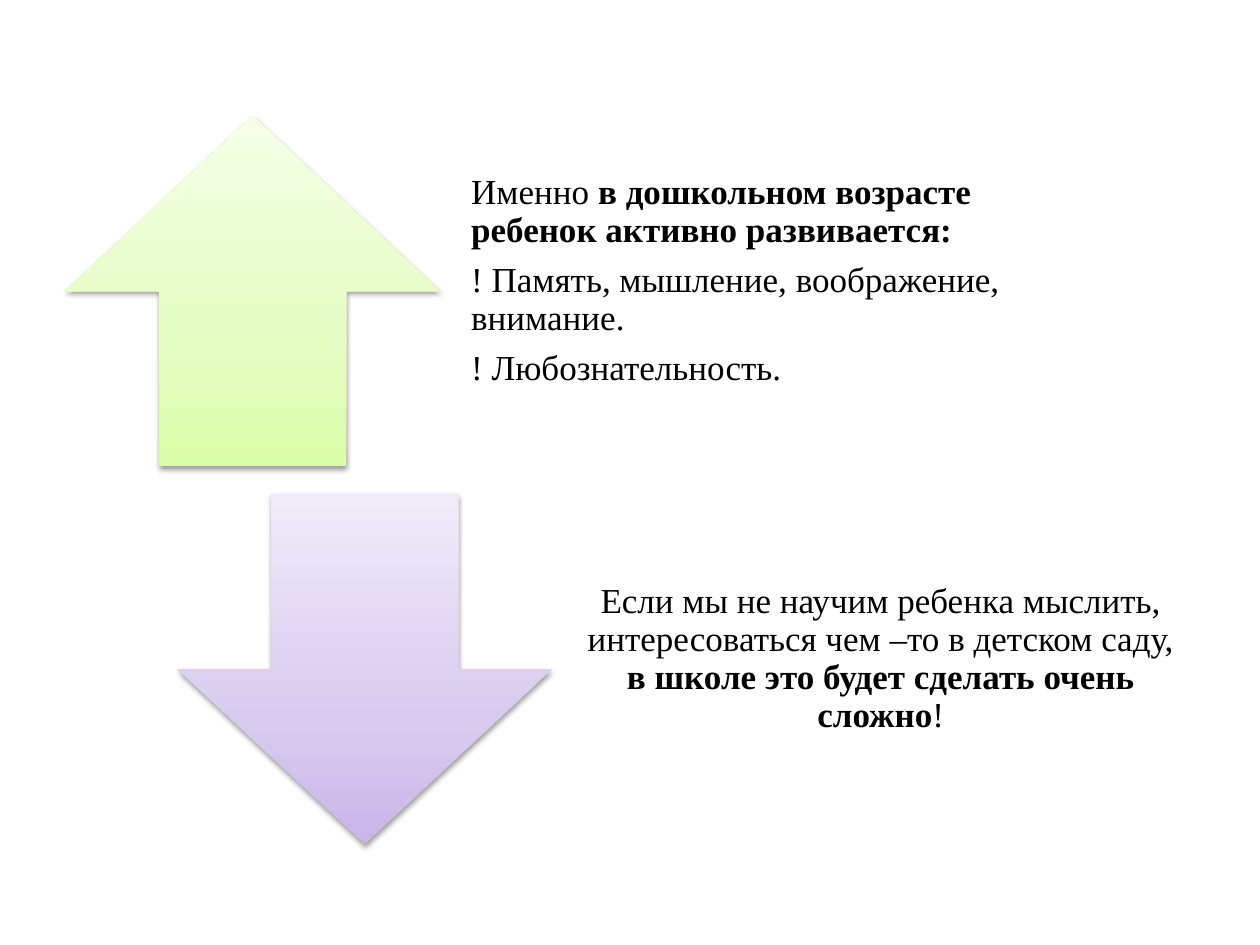
from copy import deepcopy
from dataclasses import dataclass

from lxml.etree import SubElement
from pptx import Presentation
from pptx.dml.color import RGBColor
from pptx.enum.shapes import MSO_SHAPE as Preset
from pptx.enum.text import MSO_ANCHOR as Anchor, PP_ALIGN as Align
from pptx.oxml.ns import qn
from pptx.util import Inches, Pt


@dataclass(frozen=True)
class Theme:
    """Colours, font and type sizes of the slide."""
    font: str = "Times New Roman"
    size: Pt = Pt(20)
    space_after: Pt = Pt(7)
    ink: str = "000000"
    green: tuple[str, ...] = ("DAFDA7", "E4FCC2", "F5FFE7")
    violet: tuple[str, ...] = ("C9B5E8", "D8CBEE", "F0EAF9")
    stops: tuple[float, ...] = (0, 0.35, 1)


@dataclass(frozen=True)
class Phrase:
    """A run of words in one weight."""
    words: str
    bold: bool = False


@dataclass(frozen=True)
class Statement:
    """An arrow with the text at its right."""
    preset: Preset
    left: float
    top: float
    colours: tuple[str, ...]
    align: Align
    paragraphs: tuple[tuple[Phrase, ...], ...]


THEME = Theme()
ARROW_WIDTH, TEXT_WIDTH, ROW_HEIGHT, GAP = 2.97, 5.04, 2.78, 0.09
STATEMENTS = (
    Statement(Preset.UP_ARROW, 0.52, 0.92, THEME.green, Align.LEFT, (
        (Phrase("Именно "),
         Phrase("в дошкольном возрасте ребенок активно развивается:", True)),
        (Phrase("! Память, мышление, воображение, внимание."),),
        (Phrase("! Любознательность."),),
    )),
    Statement(Preset.DOWN_ARROW, 1.41, 3.92, THEME.violet, Align.CENTER, (
        (Phrase("Если мы не научим ребенка мыслить, интересоваться чем –то в детском саду, "),
         Phrase("в школе это будет сделать очень сложно", True),
         Phrase("!")),
    )),
)


def apply_format(target: object, values: dict) -> None:
    """Set each named attribute on the target."""
    for name, value in values.items():
        setattr(target, name, value)


def add_soft_shadow(properties) -> None:
    """Put a faint downward shadow in the emptied effect list."""
    shadow = SubElement(properties.find(qn("a:effectLst")), qn("a:outerShdw"),
                        blurRad=str(Pt(3.1)), dist=str(Pt(1.6)),
                        dir="5400000", rotWithShape="0")
    colour = SubElement(shadow, qn("a:srgbClr"), val=THEME.ink)
    SubElement(colour, qn("a:alpha"), val="38000")


def draw_arrow(slide, statement: Statement) -> None:
    """Draw the arrow with its three-stop gradient and shadow."""
    arrow = slide.shapes.add_shape(
        statement.preset, Inches(statement.left), Inches(statement.top),
        Inches(ARROW_WIDTH), Inches(ROW_HEIGHT))
    arrow.line.fill.background()
    arrow.fill.gradient()
    arrow.fill.gradient_angle = 90
    properties = arrow._element.spPr
    stop_list = properties.find(qn("a:gradFill")).find(qn("a:gsLst"))
    stop_list.append(deepcopy(stop_list[0]))
    for stop, position, colour in zip(arrow.fill.gradient_stops, THEME.stops, statement.colours):
        stop.position = position
        stop.color.rgb = RGBColor.from_string(colour)
    arrow.shadow.inherit = False
    add_soft_shadow(properties)


def draw_text(slide, statement: Statement) -> None:
    """Write the paragraphs at the right of the arrow."""
    frame = slide.shapes.add_textbox(
        Inches(statement.left + ARROW_WIDTH + GAP), Inches(statement.top),
        Inches(TEXT_WIDTH), Inches(ROW_HEIGHT)).text_frame
    apply_format(frame, {
        "word_wrap": True, "vertical_anchor": Anchor.MIDDLE,
        "margin_left": Inches(0.16), "margin_top": 0,
        "margin_right": Inches(0.16), "margin_bottom": Inches(0.16)})
    for index, phrases in enumerate(statement.paragraphs):
        paragraph = frame.add_paragraph() if index else frame.paragraphs[0]
        apply_format(paragraph, {
            "alignment": statement.align, "line_spacing": 0.9,
            "space_after": THEME.space_after})
        for phrase in phrases:
            run = paragraph.add_run()
            run.text = phrase.words
            apply_format(run.font, {"name": THEME.font, "size": THEME.size, "bold": phrase.bold})
            run.font.color.rgb = RGBColor.from_string(THEME.ink)


def main() -> None:
    """Build and save the slide."""
    deck = Presentation()
    apply_format(deck, {"slide_width": Inches(10), "slide_height": Inches(7.5)})
    slide = deck.slides.add_slide(deck.slide_layouts[6])
    for statement in STATEMENTS:
        draw_arrow(slide, statement)
        draw_text(slide, statement)
    deck.save("out.pptx")


if __name__ == "__main__":
    main()
